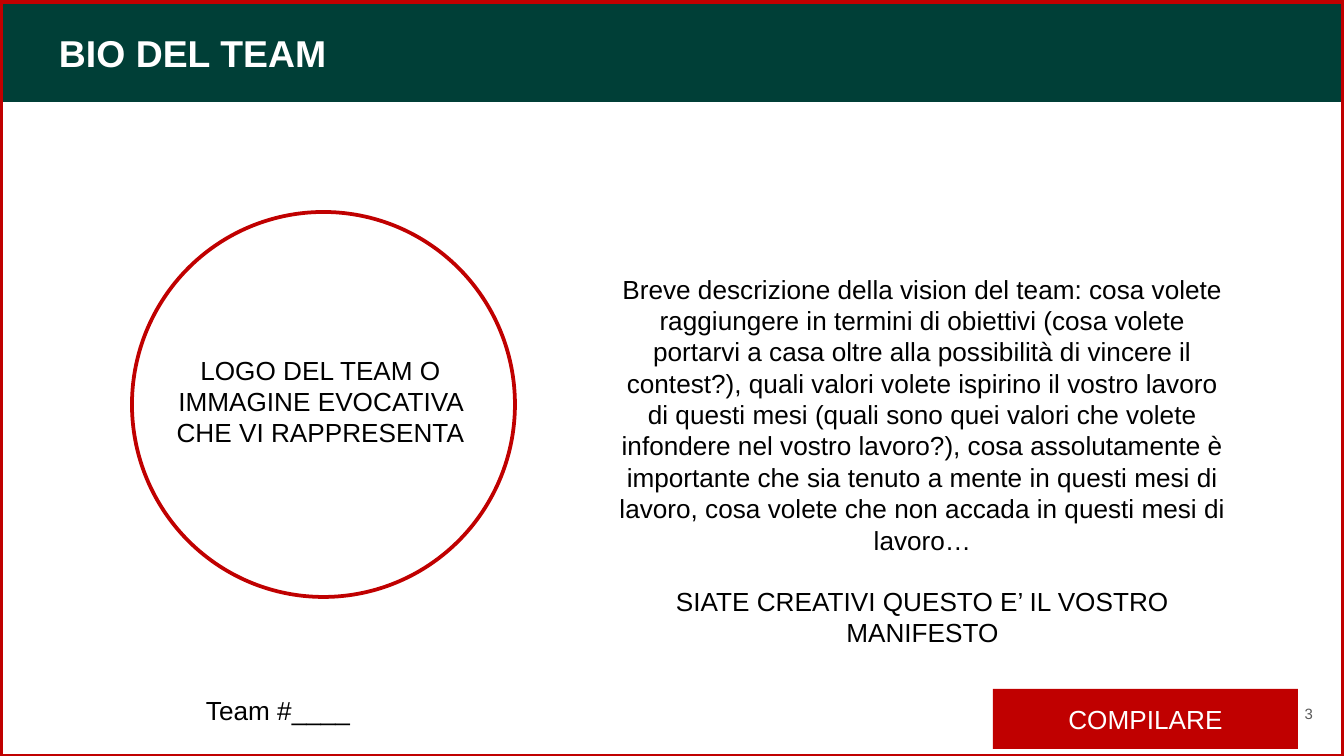
import pptx
import pptx.util
import pptx.dml.color
import pptx.enum.shapes
import pptx.enum.text
import pptx.oxml
import pptx.oxml.ns

PX = 9144000 / 1344  # EMU in one px
W, H = 1344, 756
GREEN, RED, BLACK, WHITE, GREY = "003F37", "C00000", "000000", "FFFFFF", "595959"

SHAPE = pptx.enum.shapes.MSO_SHAPE
ALIGN = pptx.enum.text.PP_ALIGN
ANCHOR = pptx.enum.text.MSO_ANCHOR
AUTO = pptx.enum.text.MSO_AUTO_SIZE

VISION = (
    "Breve descrizione della vision del team: cosa volete raggiungere in termini di "
    "obiettivi (cosa volete portarvi a casa oltre alla possibilità di vincere il "
    "contest?), quali valori volete ispirino il vostro lavoro di questi mesi (quali sono "
    "quei valori che volete infondere nel vostro lavoro?), cosa assolutamente è "
    "importante che sia tenuto a mente in questi mesi di lavoro, cosa volete che non "
    "accada in questi mesi di lavoro…"
)


def px(n):
    return pptx.util.Emu(round(n * PX))


def rgb(value):
    return pptx.dml.color.RGBColor.from_string(value)


def place(sp, x, y, w, h):
    sp.left, sp.top, sp.width, sp.height = px(x), px(y), px(w), px(h)


def add_shape(slide, kind, x, y, w, h, fill=None, line=None, weight=0):
    sp = slide.shapes.add_shape(kind, px(x), px(y), px(w), px(h))
    sp.shadow.inherit = False
    if fill:
        sp.fill.solid()
        sp.fill.fore_color.rgb = rgb(fill)
    else:
        sp.fill.background()
    if line:
        sp.line.color.rgb = rgb(line)
        sp.line.width = pptx.util.Pt(weight)
    else:
        sp.line.fill.background()
    return sp


def set_text(sp, text, size=14, color=BLACK, bold=False, align=ALIGN.LEFT,
             anchor=ANCHOR.MIDDLE, inset=7, auto_size=AUTO.NONE):
    tf = sp.text_frame
    tf.text = text
    tf.word_wrap = True
    tf.auto_size = auto_size
    tf.vertical_anchor = anchor
    tf.margin_left = tf.margin_right = px(13)
    tf.margin_top = tf.margin_bottom = px(inset)
    for p in tf.paragraphs:
        p.alignment = align
        p.space_before = pptx.util.Pt(0)
        for r in p.runs:
            r.font.name = "Arial"
            r.font.size = pptx.util.Pt(size)
            r.font.bold = bold
            r.font.color.rgb = rgb(color)


def add_text(slide, text, x, y, w, h, **style):
    sp = slide.shapes.add_textbox(px(x), px(y), px(w), px(h))
    set_text(sp, text, **style)


def header(slide, x, y, w, h):
    band = add_shape(slide, SHAPE.RECTANGLE, x, y, w, h, fill=GREEN)
    title = slide.shapes.title
    title._element.addprevious(band._element)  # the band lies behind the title
    place(title, x + 46, y + 10, w - 92, h - 17)
    set_text(title, "BIO DEL TEAM", size=20, color=WHITE, bold=True, inset=13)


def team_logo(slide, x, y, w, h):
    add_shape(slide, SHAPE.OVAL, x, y, w, h, line=RED, weight=2)
    add_text(slide, "LOGO DEL TEAM O IMMAGINE EVOCATIVA CHE VI RAPPRESENTA",
             x + 22, y + 135, 333, 109, align=ALIGN.CENTER, anchor=ANCHOR.TOP)


def manifesto(slide, x, y, w, h):
    body = slide.placeholders[1]
    place(body, x, y, w, h)
    set_text(body, VISION + "\nSIATE CREATIVI QUESTO E’ IL VOSTRO MANIFESTO",
             align=ALIGN.CENTER, anchor=ANCHOR.TOP, auto_size=AUTO.SHAPE_TO_FIT_TEXT)
    for p in body.text_frame.paragraphs:
        pPr = p._p.get_or_add_pPr()
        pPr.set("marL", "0")
        pPr.set("indent", "0")
        pPr.append(pptx.oxml.parse_xml(
            "<a:buNone %s/>" % pptx.oxml.ns.nsdecls("a")))
    p.space_before = pptx.util.Pt(16)  # one line before the closing call


def footer(slide, x, y, w, h):
    add_text(slide, "Team #____", x, y, 305, h)
    button = add_shape(slide, SHAPE.RECTANGLE, x + 800, y + 9, 305, h, fill=RED)
    set_text(button, "COMPILARE", color=WHITE, align=ALIGN.CENTER)
    add_text(slide, "3", x + w - 81, y + 5, 81, 58,
             size=8, color=GREY, align=ALIGN.RIGHT, inset=13)


def main():
    prs = pptx.Presentation()
    prs.slide_width, prs.slide_height = px(W), px(H)
    slide = prs.slides.add_slide(prs.slide_layouts[1])

    header(slide, 0, 0, W, 102)
    add_shape(slide, SHAPE.RECTANGLE, 0, 1, W, H, line=RED, weight=3)  # slide frame
    team_logo(slide, 132, 212, 383, 385)
    manifesto(slide, 600, 266, 645, 388)
    footer(slide, 193, 680, 1133, 60)

    prs.save("out.pptx")


if __name__ == "__main__":
    main()
